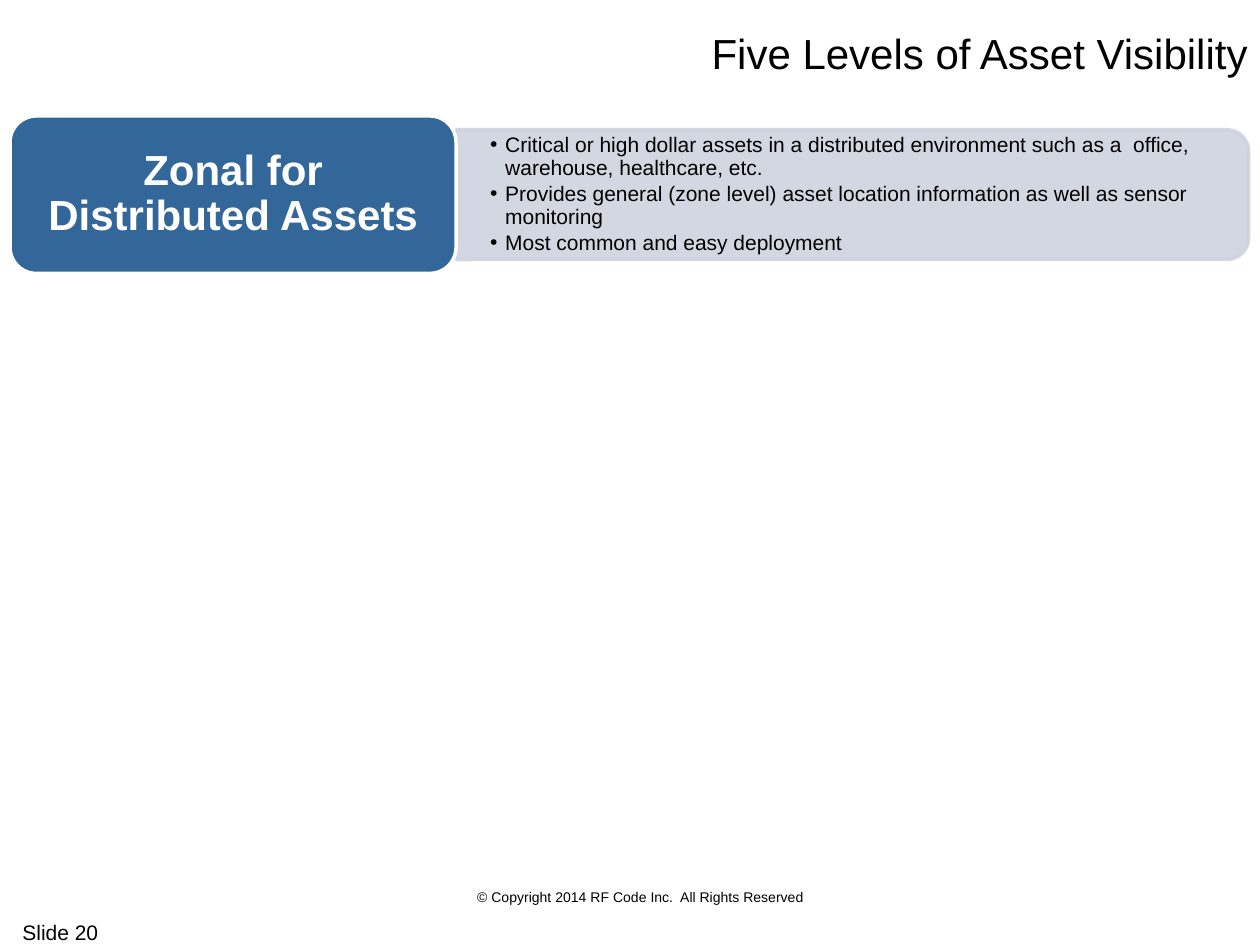
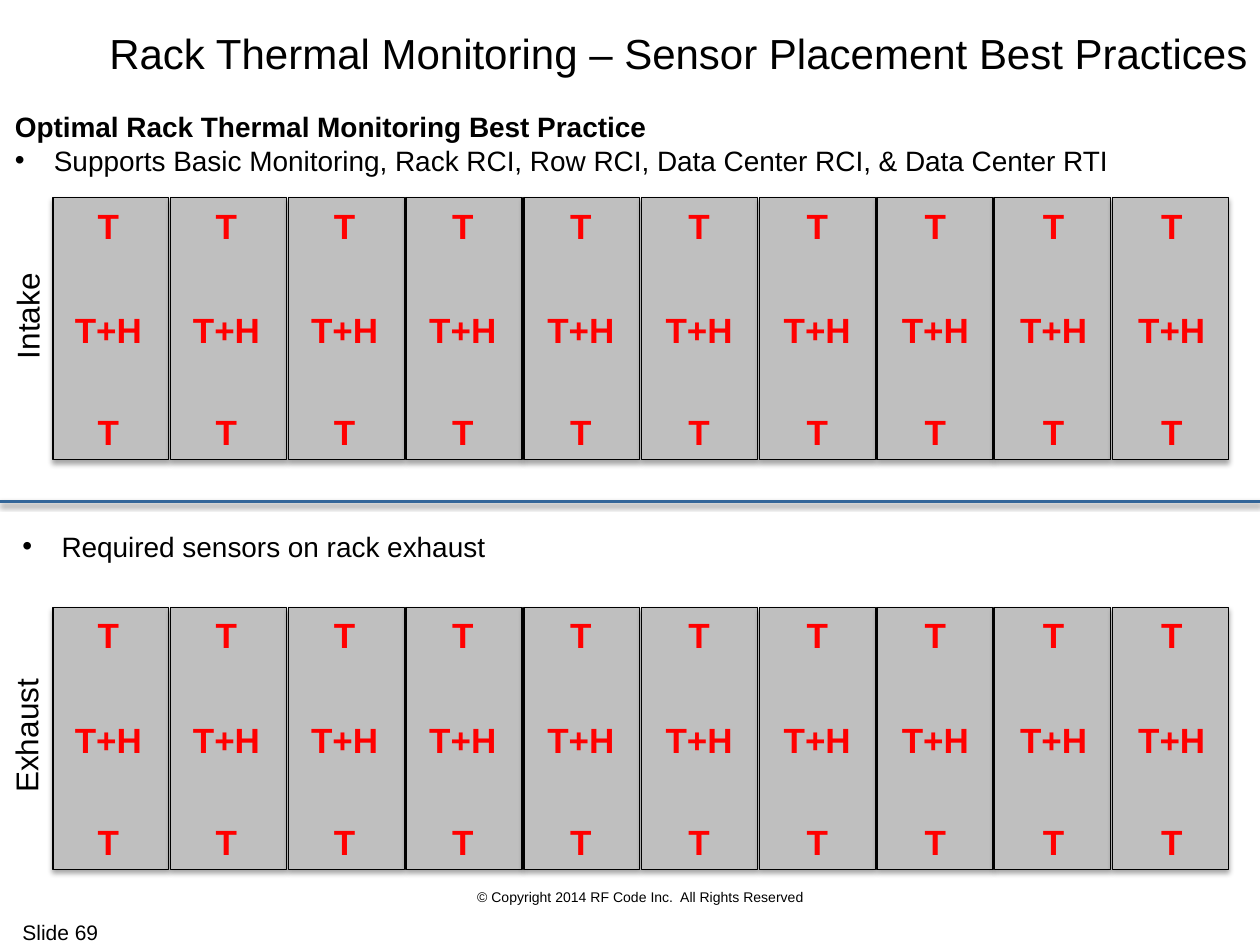
import pptx
import pptx.util
import pptx.dml.color
import pptx.enum.shapes
import pptx.enum.text
import pptx.oxml.ns
from lxml import etree

Inches, Pt = pptx.util.Inches, pptx.util.Pt
SHAPE = pptx.enum.shapes.MSO_SHAPE
ALIGN = pptx.enum.text.PP_ALIGN
MIDDLE = pptx.enum.text.MSO_ANCHOR.MIDDLE
qn = pptx.oxml.ns.qn

COLORS = {"text": "000000", "white": "FFFFFF", "blue": "336699",
          "panel": "CED3DE", "rack": "BFBFBF", "sensor": "FF0000"}
FONT = "Arial"
COPYRIGHT = "© Copyright 2014 RF Code Inc.  All Rights Reserved"

VISIBILITY = {
    "title": "Five Levels of Asset Visibility",
    "number": 20,
    "level": "Zonal for Distributed Assets",
    "points": [
        "Critical or high dollar assets in a distributed environment such as a"
        "  office, warehouse, healthcare, etc.",
        "Provides general (zone level) asset location information as well as sensor monitoring",
        "Most common and easy deployment",
    ],
}
THERMAL = {
    "title": "Rack Thermal Monitoring – Sensor Placement Best Practices",
    "number": 69,
    "heading": "Optimal Rack Thermal Monitoring Best Practice",
    "support": "Supports Basic Monitoring, Rack RCI, Row RCI, Data Center RCI, & Data Center RTI",
    "exhaust_note": "Required sensors on rack exhaust",
    # label, label box, top of the racks
    "rows": [("Intake", (-0.23, 2.31, 0.89, 0.4), 1.57),
             ("Exhaust", (-0.35, 5.64, 1.11, 0.4), 4.82)],
}

RACKS = 10
RACK_SIZE = (0.92, 2.08)
RACK_LEFTS = (0.42, 8.83)        # first and last rack
SENSOR_CENTERS = (0.86, 9.3)     # first and last column of sensors
SENSORS = [("T", 0, 0.37), ("T+H", 0.83, 0.74), ("T", 1.64, 0.37)]  # text, drop, width


def rgb(name):
    return pptx.dml.color.RGBColor.from_string(COLORS[name])


def spread(ends, i):
    """Position i of RACKS equally spaced ones between two ends."""
    return ends[0] + (ends[1] - ends[0]) * i / (RACKS - 1)


def set_bullet(p, indent):
    pPr = p._p.get_or_add_pPr()
    pPr.set("marL", str(Inches(indent)))
    pPr.set("indent", str(-Inches(indent)))
    etree.SubElement(pPr, qn("a:buFont"), typeface=FONT)
    etree.SubElement(pPr, qn("a:buChar"), char="•")


def add_text(s, box, lines, size, color="text", bold=False, align=ALIGN.LEFT, middle=False,
             wrap=True, bullet=None, insets=(0.1, 0.05), spacing=None, after=None):
    sp = s.shapes.add_textbox(*map(Inches, box))
    tf = sp.text_frame
    tf.word_wrap = wrap
    tf.margin_left = tf.margin_right = Inches(insets[0])
    tf.margin_top = tf.margin_bottom = Inches(insets[1])
    if middle:
        tf.vertical_anchor = MIDDLE
    tf.text = "\n".join(lines)
    for p in tf.paragraphs:
        p.alignment = align
        if spacing:
            p.line_spacing = spacing
        if after:
            p.space_after = Pt(after)
        if bullet:
            set_bullet(p, bullet)
        for r in p.runs:
            r.font.name, r.font.size, r.font.bold = FONT, Pt(size), bold
            r.font.color.rgb = rgb(color)
    return sp


def add_box(s, kind, box, fill, line, width):
    sp = s.shapes.add_shape(kind, *map(Inches, box))
    sp.shadow.inherit = False
    sp.fill.solid()
    sp.fill.fore_color.rgb = rgb(fill)
    sp.line.color.rgb = rgb(line)
    sp.line.width = Pt(width)
    return sp


def add_shadow(sp, distance, opacity):
    spPr = sp._element.spPr
    effects = spPr.find(qn("a:effectLst"))
    if effects is None:
        effects = etree.SubElement(spPr, qn("a:effectLst"))
    shadow = etree.SubElement(effects, qn("a:outerShdw"), blurRad=str(Pt(3.1)),
                              dist=str(Pt(distance)), dir="5400000", rotWithShape="0")
    color = etree.SubElement(shadow, qn("a:srgbClr"), val=COLORS["text"])
    etree.SubElement(color, qn("a:alpha"), val=str(opacity * 1000))


def new_slide(prs, content):
    s = prs.slides.add_slide(prs.slide_layouts[6])
    add_text(s, (3.42, 7, 3.33, 0.23), [COPYRIGHT], 8, align=ALIGN.CENTER)
    add_text(s, (0.08, 7.25, 2, 0.3), [f"Slide {content['number']}"], 12)
    add_text(s, (0.08, 0.17, 9.92, 0.5), [content["title"]], 24, align=ALIGN.RIGHT, middle=True)
    return s


def build_visibility(prs):
    s = new_slide(prs, VISIBILITY)
    panel = add_box(s, SHAPE.ROUND_2_SAME_RECTANGLE, (6.25, -1.6, 1.03, 6.29), "panel", "panel", 2)
    panel.rotation = 90
    for color in panel._element.spPr.iter(qn("a:srgbClr")):
        etree.SubElement(color, qn("a:alpha"), val="90000")
    add_text(s, (3.62, 1.08, 6.24, 0.93), VISIBILITY["points"], 12, middle=True,
             bullet=0.12, insets=(0.27, 0.14), spacing=0.9, after=2)
    add_box(s, SHAPE.ROUNDED_RECTANGLE, (0.08, 0.92, 3.54, 1.25), "blue", "white", 2)
    add_text(s, (0.14, 0.98, 3.42, 1.13), [VISIBILITY["level"]], 24, "white", True,
             ALIGN.CENTER, middle=True, spacing=0.9)


def add_rack_row(s, label, label_box, top):
    for i in range(RACKS):
        rack = add_box(s, SHAPE.RECTANGLE, (spread(RACK_LEFTS, i), top, *RACK_SIZE),
                       "rack", "text", 0.75)
        add_shadow(rack, 1.8, 35)
    for i in range(RACKS):
        for text, drop, width in SENSORS:
            left = spread(SENSOR_CENTERS, i) - width / 2
            add_text(s, (left, top + drop, width, 0.44), [text], 20, "sensor", True,
                     ALIGN.CENTER, wrap=False)
    add_text(s, label_box, [label], 18, align=ALIGN.CENTER, wrap=False).rotation = 270


def build_thermal(prs):
    s = new_slide(prs, THERMAL)
    intro = add_text(s, (0.02, 0.82, 8.93, 0.64), [THERMAL["heading"], THERMAL["support"]],
                     16, wrap=False)
    heading, support = intro.text_frame.paragraphs
    heading.runs[0].font.bold = True
    set_bullet(support, 0.31)
    divider = s.shapes.add_connector(pptx.enum.shapes.MSO_CONNECTOR.STRAIGHT,
                                     0, Inches(3.98), Inches(10), Inches(3.98))
    divider.line.color.rgb = rgb("blue")
    divider.line.width = Pt(2)
    add_shadow(divider, 1.6, 38)
    for row in THERMAL["rows"]:
        add_rack_row(s, *row)
    add_text(s, (0.08, 4.15, 3.92, 0.37), [THERMAL["exhaust_note"]], 16, wrap=False, bullet=0.31)


def main():
    prs = pptx.Presentation()
    prs.slide_width, prs.slide_height = Inches(10), Inches(7.5)
    build_visibility(prs)
    build_thermal(prs)
    prs.save("out.pptx")


if __name__ == "__main__":
    main()
